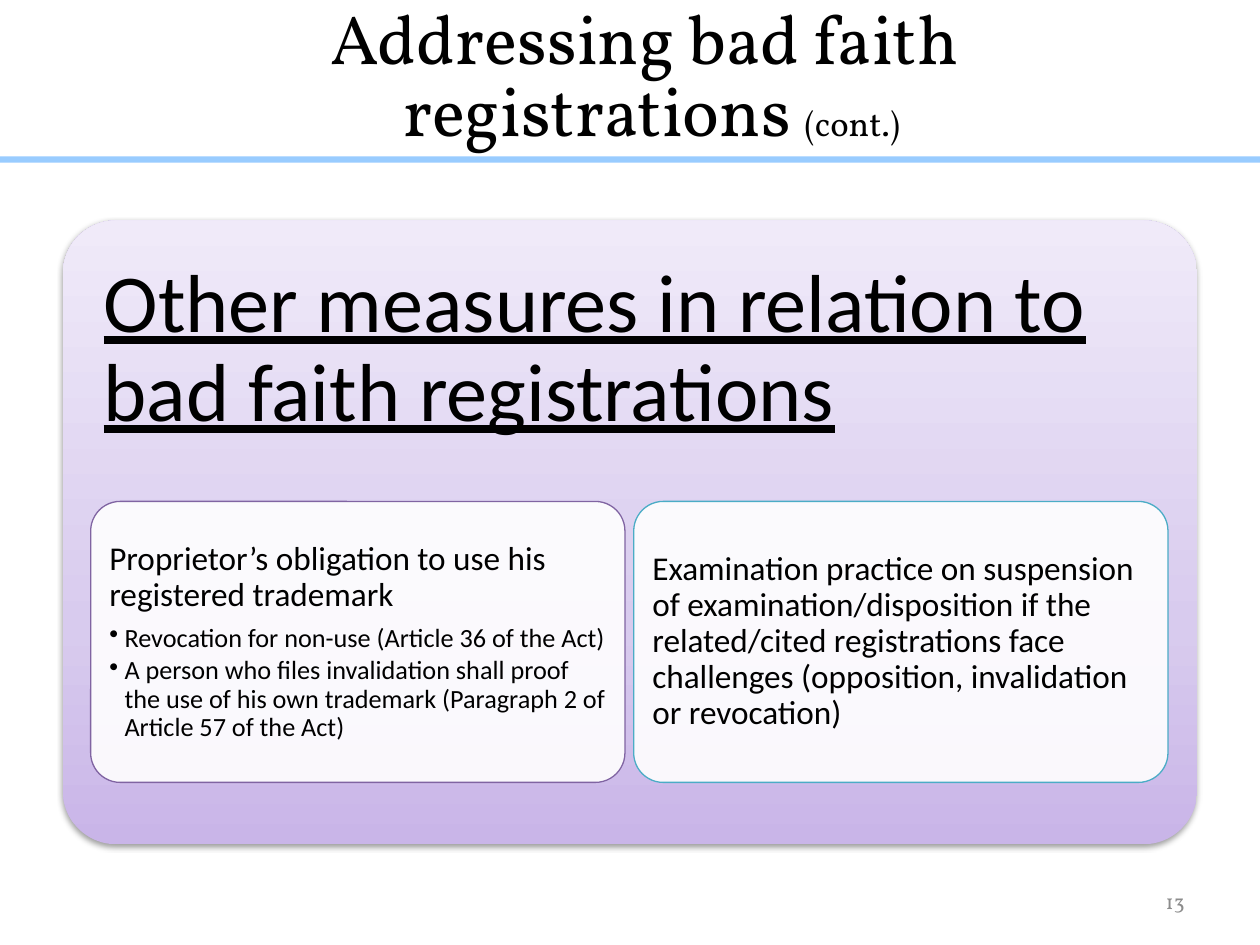
from copy import deepcopy
from dataclasses import dataclass

from lxml import etree
from pptx import Presentation
from pptx.dml.color import RGBColor
from pptx.enum import shapes, text
from pptx.oxml import ns
from pptx.util import Inches, Pt

BLACK = RGBColor(0x00, 0x00, 0x00)
WHITE = RGBColor(0xFF, 0xFF, 0xFF)
GRAY = RGBColor(0x8C, 0x8C, 0x8C)
SKY = RGBColor(0x99, 0xCC, 0xFF)
PURPLE = RGBColor(0x80, 0x64, 0xA2)
TEAL = RGBColor(0x4B, 0xAC, 0xC6)
PANEL_STOPS = (
    (0, RGBColor(0xC9, 0xB5, 0xE8)),
    (0.35, RGBColor(0xD8, 0xCB, 0xEE)),
    (1, RGBColor(0xF0, 0xEA, 0xF9)),
)
HEADING_FONT = "Vollkorn"
BODY_FONT = "Calibri"
CARD_LEFT, CARD_TOP, CARD_WIDTH, CARD_HEIGHT = 0.72, 3.98, 4.24, 2.23
CARD_PITCH = 4.31


@dataclass(frozen=True)
class Card:
    heading: str
    bullets: tuple[str, ...]
    line_color: RGBColor


CARDS = (
    Card(
        "Proprietor’s obligation to use his registered trademark",
        (
            "Revocation for non-use (Article 36 of the Act)",
            "A person who files invalidation shall proof the use of his own "
            "trademark (Paragraph 2 of Article 57 of the Act)",
        ),
        PURPLE,
    ),
    Card(
        "Examination practice on suspension of examination/disposition if the "
        "related/cited registrations face challenges (opposition, invalidation "
        "or revocation)",
        (),
        TEAL,
    ),
)


def add_child(parent, tag: str, **attributes):
    return etree.SubElement(parent, ns.qn(tag), attributes)


def set_font(paragraph, name: str, size: float, color: RGBColor) -> None:
    paragraph.font.name = name
    paragraph.font.size = Pt(size)
    paragraph.font.color.rgb = color


def set_body_style(paragraph, size: float, space_after: float) -> None:
    paragraph.alignment = text.PP_ALIGN.LEFT
    paragraph.line_spacing = 0.9
    paragraph.space_after = Pt(space_after)
    set_font(paragraph, BODY_FONT, size, BLACK)


def set_frame(frame, anchor, inset: float) -> None:
    frame.word_wrap = True
    frame.vertical_anchor = anchor
    frame.margin_left = frame.margin_right = Inches(inset)
    frame.margin_top = frame.margin_bottom = Inches(inset)


def add_box(slide, kind, left: float, top: float, width: float, height: float):
    shape = slide.shapes.add_shape(
        kind, Inches(left), Inches(top), Inches(width), Inches(height)
    )
    shape.shadow.inherit = False
    shape.line.fill.background()
    return shape


def add_textbox(slide, left: float, top: float, width: float, height: float):
    return slide.shapes.add_textbox(
        Inches(left), Inches(top), Inches(width), Inches(height)
    ).text_frame


def add_title(slide) -> None:
    frame = add_textbox(slide, 0.67, 0, 9, 1.25)
    set_frame(frame, text.MSO_ANCHOR.MIDDLE, 0.05)
    paragraph = frame.paragraphs[0]
    paragraph.alignment = text.PP_ALIGN.CENTER
    paragraph.line_spacing = 0.87
    set_font(paragraph, HEADING_FONT, 39.6, BLACK)
    paragraph.add_run().text = "Addressing bad faith "
    paragraph.add_line_break()
    paragraph.add_run().text = "registrations "
    suffix = paragraph.add_run()
    suffix.text = "(cont.)"
    suffix.font.size = Pt(19.8)


def add_panel(slide) -> None:
    panel = add_box(slide, shapes.MSO_SHAPE.ROUNDED_RECTANGLE, 0.5, 1.75, 9, 4.95)
    panel.adjustments[0] = 0.085
    panel.fill.gradient()
    panel.fill.gradient_angle = 90
    properties = panel._element.spPr
    stop_list = properties.find(".//" + ns.qn("a:gsLst"))
    stop_list.insert(1, deepcopy(stop_list[0]))
    for stop, (position, color) in zip(panel.fill.gradient_stops, PANEL_STOPS):
        stop.position = position
        stop.color.rgb = color

    shadow = add_child(
        properties.find(ns.qn("a:effectLst")), "a:outerShdw",
        blurRad=str(Pt(3.1)), dist=str(Pt(1.6)), dir="5400000", rotWithShape="0",
    )
    add_child(add_child(shadow, "a:srgbClr", val=str(BLACK)), "a:alpha", val="38000")

    frame = panel.text_frame
    set_frame(frame, text.MSO_ANCHOR.TOP, 0.2)
    frame.margin_bottom = Inches(3.06)
    paragraph = frame.paragraphs[0]
    paragraph.text = "Other measures in relation to bad faith registrations"
    set_body_style(paragraph, 47, 16)
    paragraph.font.underline = True


def add_card(slide, card: Card, left: float) -> None:
    shape = add_box(
        slide, shapes.MSO_SHAPE.ROUNDED_RECTANGLE,
        left, CARD_TOP, CARD_WIDTH, CARD_HEIGHT,
    )
    shape.adjustments[0] = 0.105
    shape.fill.solid()
    shape.fill.fore_color.rgb = WHITE
    fill_color = shape._element.spPr.find(ns.qn("a:solidFill"))[0]
    add_child(fill_color, "a:alpha", val="90000")
    shape.line.color.rgb = card.line_color
    shape.line.width = Pt(0.75)

    frame = shape.text_frame
    set_frame(frame, text.MSO_ANCHOR.MIDDLE, 0.08)
    heading = frame.paragraphs[0]
    heading.text = card.heading
    set_body_style(heading, 19, 6.65)
    for bullet in card.bullets:
        paragraph = frame.add_paragraph()
        paragraph.text = bullet
        paragraph.level = 1
        properties = paragraph._p.get_or_add_pPr()
        properties.set("marL", str(Inches(0.12)))
        properties.set("indent", str(-Inches(0.12)))
        add_child(properties, "a:buChar", char="•")
        set_body_style(paragraph, 15, 2.25)


def add_slide_number(slide) -> None:
    frame = add_textbox(slide, 7.17, 6.95, 2.33, 0.4)
    frame.word_wrap = True
    frame.vertical_anchor = text.MSO_ANCHOR.MIDDLE
    paragraph = frame.paragraphs[0]
    paragraph.text = "13"
    paragraph.alignment = text.PP_ALIGN.RIGHT
    set_font(paragraph, HEADING_FONT, 12, GRAY)


def main() -> None:
    presentation = Presentation()
    presentation.slide_width = Inches(10)
    presentation.slide_height = Inches(7.5)
    slide = presentation.slides.add_slide(presentation.slide_layouts[6])

    band = add_box(slide, shapes.MSO_SHAPE.RECTANGLE, -0.04, 1.24, 10.06, 0.05)
    band.fill.solid()
    band.fill.fore_color.rgb = SKY
    add_title(slide)
    add_panel(slide)
    for index, card in enumerate(CARDS):
        add_card(slide, card, CARD_LEFT + index * CARD_PITCH)
    add_slide_number(slide)
    presentation.save("out.pptx")


if __name__ == "__main__":
    main()
